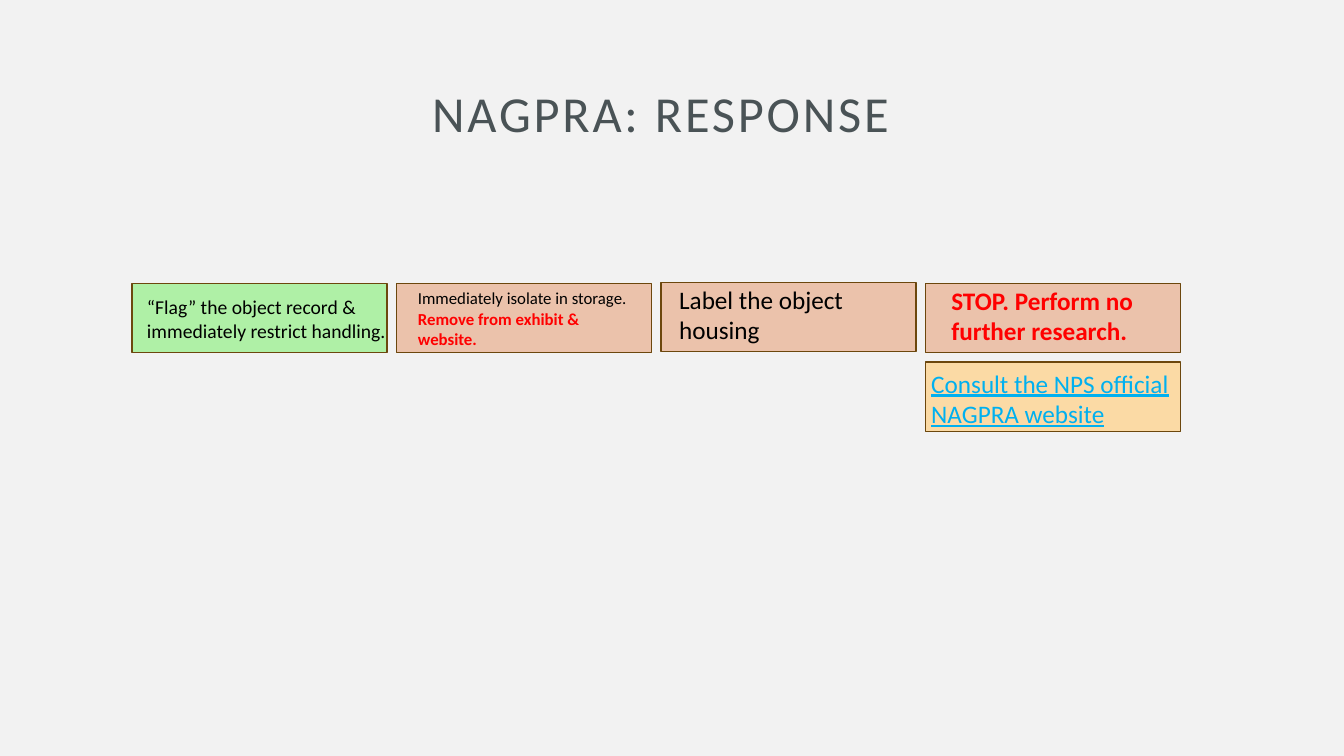
"""Build the NAGPRA response slide with its row of action boxes."""
from pptx import Presentation
from pptx.dml.color import RGBColor
from pptx.enum.shapes import MSO_SHAPE as Shape
from pptx.enum.text import MSO_ANCHOR as Anchor, PP_ALIGN as Align
from pptx.util import Pt

FONT = "Calibri"
TITLE = "NAGPRA: RESPONSE"
GREEN, PEACH, GOLD = "AFF0A6", "EBC2AB", "FBDAA5"
BLACK, RED, BLUE = "000000", "FF0000", "00B0F0"
PLAIN, BOLD, LINE = (False, False), (True, False), (False, True)

# column, box top, fill, text (shift, top, width, height), size, runs
STEPS = [
    (0, 202.3, GREEN, (3.6, 207.4, 192.2, 41), 14,
     [("“Flag” the object record & immediately restrict handling.", BLACK, PLAIN)]),
    (1, 202.3, PEACH, (8.2, 202.3, 171.4, 51), 12,
     [("Immediately isolate in storage. ", BLACK, PLAIN),
      ("Remove from exhibit & website.", RED, BOLD)]),
    (2, 201.6, PEACH, (5.9, 199.4, 164.9, 51), 18,
     [("Label the object housing", BLACK, PLAIN)]),
    (3, 202.3, PEACH, (11.5, 200.2, 177.1, 51), 18,
     [("STOP. Perform no further research.", RED, BOLD)]),
    (3, 258.5, GOLD, (-2.9, 259.2, 205.2, 51), 18,
     [("Consult the NPS official NAGPRA website", BLUE, LINE)]),
]
LEFT, PITCH, WIDE, HIGH = 94.3, 188.9, 182.2, 49.7


def rgb(code):
    return RGBColor.from_string(code)


def add_text(slide, area, size, runs):
    box = slide.shapes.add_textbox(*map(Pt, area))
    frame = box.text_frame
    frame.word_wrap = True
    para = frame.paragraphs[0]
    for words, color, (bold, line) in runs:
        run = para.add_run()
        run.text = words
        font = run.font
        font.name, font.size = FONT, Pt(size)
        font.bold, font.underline = bold, line
        font.color.rgb = rgb(color)
    return frame


def add_box(slide, area, fill):
    box = slide.shapes.add_shape(Shape.RECTANGLE, *map(Pt, area))
    box.shadow.inherit = False
    box.fill.solid()
    box.fill.fore_color.rgb = rgb(fill)
    box.line.color.rgb = rgb("6C470D")
    box.line.width = Pt(1)


def main():
    deck = Presentation()
    deck.slide_width, deck.slide_height = Pt(960), Pt(540)
    slide = deck.slides.add_slide(deck.slide_layouts[6])
    back = slide.background.fill
    back.solid()
    back.fore_color.rgb = rgb("F2F2F2")

    head = add_text(slide, (65.5, 55.4, 812.9, 55.4), 36,
                    [(TITLE, "4A5356", PLAIN)])
    head.vertical_anchor = Anchor.MIDDLE
    head.margin_left = head.margin_right = Pt(14.4)
    head.margin_top = head.margin_bottom = 0
    para = head.paragraphs[0]
    para.alignment, para.line_spacing = Align.CENTER, 0.9
    para.runs[0].font._element.set("spc", "200")

    for col, top, fill, (shift, y, wide, high), size, runs in STEPS:
        left = LEFT + col * PITCH
        add_box(slide, (left, top, WIDE, HIGH), fill)
        add_text(slide, (left + shift, y, wide, high), size, runs)
    deck.save("out.pptx")


if __name__ == "__main__":
    main()
